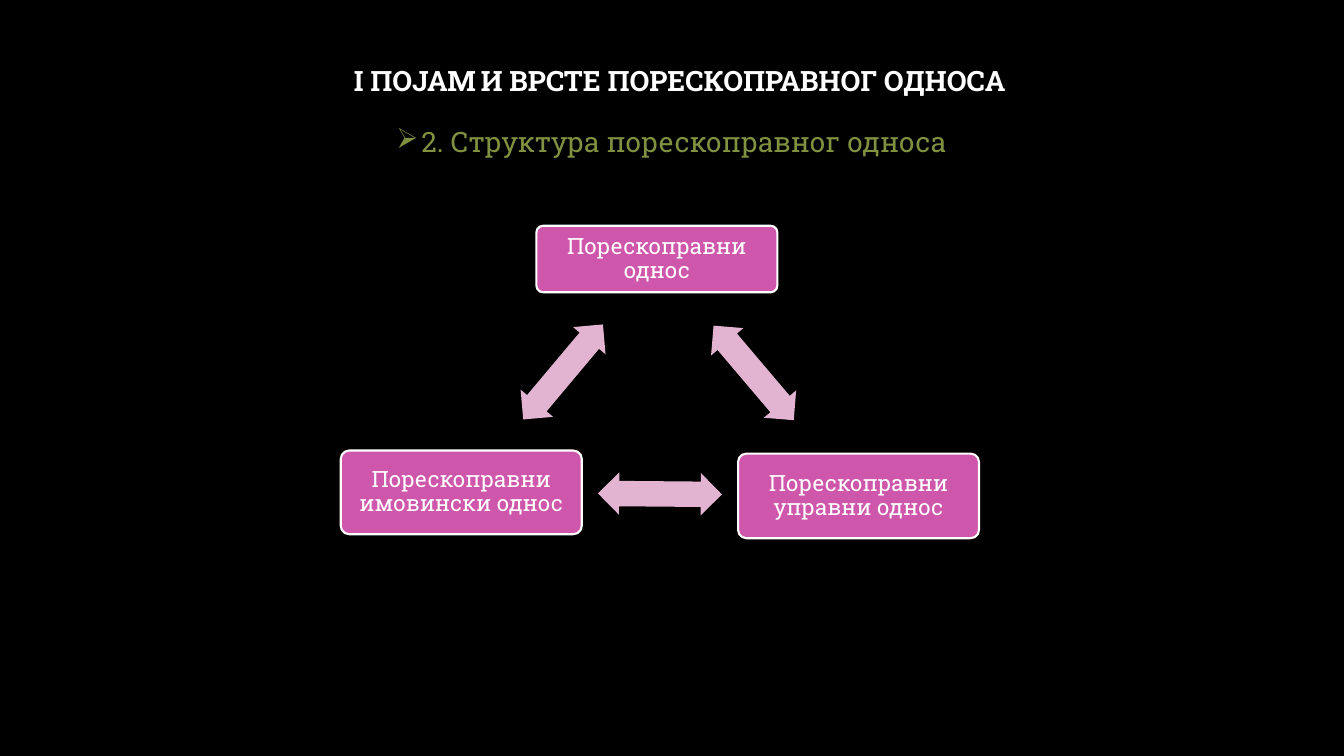
"""Build the slide on the structure of the tax law relationship."""
from dataclasses import dataclass

from lxml import etree
from pptx import Presentation
from pptx import util as u
from pptx.dml.color import RGBColor
from pptx.enum import shapes, text
from pptx.oxml import ns

BLACK = RGBColor(0x00, 0x00, 0x00)
WHITE = RGBColor(0xFF, 0xFF, 0xFF)
OLIVE = RGBColor(0x80, 0x92, 0x40)
PINK = RGBColor(0xCE, 0x57, 0xAB)
PALE = RGBColor(0xE3, 0xB4, 0xD2)
FONT = "Roboto Slab"
NODE_W = 2.39
ARROW_W, ARROW_H = 1.23, 0.42
INSET = 0.07


@dataclass(frozen=True)
class Node:
    label: str
    left: float
    top: float
    height: float


@dataclass(frozen=True)
class Arrow:
    left: float
    top: float
    angle: float


NODES = (
    Node("Порескоправни однос", 5.32, 2.24, 0.66),
    Node("Порескоправни управни однос", 7.32, 4.5, 0.84),
    Node("Порескоправни имовински однос", 3.38, 4.47, 0.83),
)
ARROWS = (
    Arrow(6.86, 3.49, 49.7),
    Arrow(5.93, 4.69, 180.5),
    Arrow(4.97, 3.48, 310),
)


def write(frame, words: str, size: int, color: RGBColor, space: float, bold: bool = False):
    """Put one centred run into a frame and return its paragraph."""
    frame.word_wrap = True
    para = frame.paragraphs[0]
    para.alignment = text.PP_ALIGN.CENTER
    para.line_spacing = space
    run = para.add_run()
    run.text = words
    font = run.font
    font.name, font.size, font.bold = FONT, u.Pt(size), bold
    font.color.rgb = color
    return para


def add_title(slide) -> None:
    """Add the slide heading."""
    box = slide.shapes.add_textbox(u.Inches(1.08), u.Inches(0.59), u.Inches(11.32), u.Inches(0.45))
    box.text_frame.vertical_anchor = text.MSO_ANCHOR.MIDDLE
    write(box.text_frame, "I ПОЈАМ И ВРСТЕ ПОРЕСКОПРАВНОГ ОДНОСА", 20, WHITE, 0.9, True)


def add_topic(slide) -> None:
    """Add the bulleted topic line."""
    box = slide.shapes.add_textbox(u.Inches(1), u.Inches(1.12), u.Inches(11.32), u.Inches(5.22))
    para = write(box.text_frame, "2. Структура порескоправног односа", 20, OLIVE, 1.2)
    para.space_before = u.Pt(10)
    props = para._p.get_or_add_pPr()
    props.set("marL", str(u.Inches(0.25)))
    props.set("indent", str(-u.Inches(0.25)))
    etree.SubElement(props, ns.qn("a:buChar")).set("char", "➢")


def add_node(slide, node: Node) -> None:
    """Add a labelled rounded box."""
    box = slide.shapes.add_shape(
        shapes.MSO_SHAPE.ROUNDED_RECTANGLE,
        u.Inches(node.left), u.Inches(node.top), u.Inches(NODE_W), u.Inches(node.height))
    box.adjustments[0] = 0.1
    box.shadow.inherit = False
    box.fill.solid()
    box.fill.fore_color.rgb = PINK
    box.line.color.rgb = WHITE
    box.line.width = u.Pt(1.5)
    frame = box.text_frame
    frame.vertical_anchor = text.MSO_ANCHOR.MIDDLE
    frame.margin_left = frame.margin_right = u.Inches(INSET)
    frame.margin_top = frame.margin_bottom = u.Inches(INSET)
    write(frame, node.label, 16, WHITE, 0.9)


def add_arrow(slide, arrow: Arrow) -> None:
    """Add a two-headed block arrow."""
    shape = slide.shapes.add_shape(
        shapes.MSO_SHAPE.LEFT_RIGHT_ARROW,
        u.Inches(arrow.left), u.Inches(arrow.top), u.Inches(ARROW_W), u.Inches(ARROW_H))
    shape.adjustments[0] = 0.6
    shape.adjustments[1] = 0.5
    shape.rotation = arrow.angle
    shape.shadow.inherit = False
    shape.fill.solid()
    shape.fill.fore_color.rgb = PALE
    shape.line.fill.background()


def main() -> None:
    """Draw the slide and save it."""
    deck = Presentation()
    deck.slide_width, deck.slide_height = u.Inches(13.33), u.Inches(7.5)
    slide = deck.slides.add_slide(deck.slide_layouts[6])
    slide.background.fill.solid()
    slide.background.fill.fore_color.rgb = BLACK
    add_title(slide)
    add_topic(slide)
    for node, arrow in zip(NODES, ARROWS):
        add_node(slide, node)
        add_arrow(slide, arrow)
    deck.save("out.pptx")


if __name__ == "__main__":
    main()
